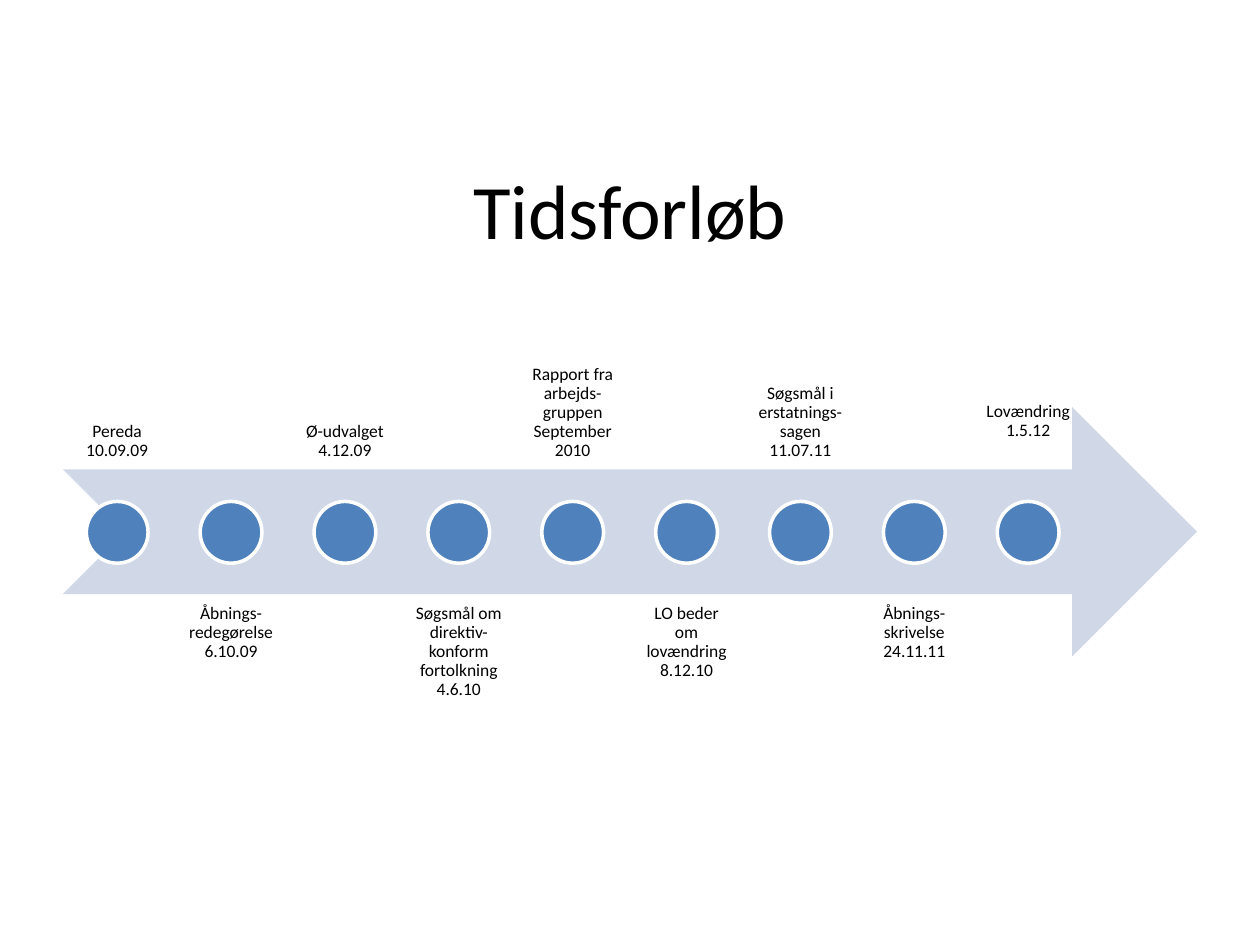
"""Build the Tidsforløb timeline slide."""
import dataclasses

import lxml.etree
import pptx
import pptx.dml.color
import pptx.enum.shapes
import pptx.enum.text
import pptx.oxml.ns
import pptx.util

Inches = pptx.util.Inches
Pt = pptx.util.Pt
Shape = pptx.enum.shapes.MSO_SHAPE
Anchor = pptx.enum.text.MSO_ANCHOR
qn = pptx.oxml.ns.qn

FONT = "Calibri"
COLORS = {"text": "000000", "band": "D0D8E8", "dot": "4F81BD", "edge": "FFFFFF"}
START, STEP = 0.5, 7.23 / 8
WIDTH, HEIGHT = 0.86, 1.98
UPPER, LOWER = 1.75, 4.72
DOT, DOT_TOP = 0.49, 3.98
PAD = 0.08


@dataclasses.dataclass
class Event:
    label: str
    lift: float = 0


EVENTS = [
    Event("Pereda\n10.09.09"),
    Event("Åbnings-redegørelse\n6.10.09"),
    Event("Ø-udvalget\n4.12.09"),
    Event("Søgsmål om direktiv-konform fortolkning\n4.6.10"),
    Event("Rapport fra arbejds-gruppen\nSeptember 2010"),
    Event("LO beder om lovændring\n8.12.10"),
    Event("Søgsmål i erstatnings-sagen\n11.07.11"),
    Event("Åbnings-skrivelse\n24.11.11"),
    Event("Lovændring\n1.5.12", lift=0.17),
]


def color(name: str) -> pptx.dml.color.RGBColor:
    return pptx.dml.color.RGBColor.from_string(COLORS[name])


def add_text(slide, text: str, box: tuple, *, size: float, anchor,
             pad: float | None = None, lift: float = 0,
             spacing: float | None = None) -> None:
    frame = slide.shapes.add_textbox(*map(Inches, box)).text_frame
    frame.word_wrap = True
    frame.vertical_anchor = anchor
    if pad is not None:
        frame.margin_left = frame.margin_right = frame.margin_top = Inches(pad)
        frame.margin_bottom = Inches(pad + lift)
    para = frame.paragraphs[0]
    para.text = text
    para.alignment = pptx.enum.text.PP_ALIGN.CENTER
    para.line_spacing = spacing
    for run in para.runs:
        run.font.name = FONT
        run.font.size = Pt(size)
        run.font.color.rgb = color("text")
    for mark in para._p.findall(qn("a:br")):
        lxml.etree.SubElement(mark, qn("a:rPr"), sz=str(size * 100))


def add_shape(slide, kind, box: tuple, fill: str, edge: str | None = None) -> None:
    shape = slide.shapes.add_shape(kind, *map(Inches, box))
    shape.shadow.inherit = False
    shape.fill.solid()
    shape.fill.fore_color.rgb = color(fill)
    if edge:
        shape.line.color.rgb = color(edge)
        shape.line.width = Pt(2)
    else:
        shape.line.fill.background()


def add_event(slide, index: int, event: Event) -> None:
    left = START + index * STEP
    above = index % 2 == 0
    add_text(slide, event.label, (left, UPPER if above else LOWER, WIDTH, HEIGHT),
             size=10, anchor=Anchor.BOTTOM if above else Anchor.TOP,
             pad=PAD, lift=event.lift, spacing=0.9)
    add_shape(slide, Shape.OVAL, (left + (WIDTH - DOT) / 2, DOT_TOP, DOT, DOT),
              "dot", "edge")


def main() -> None:
    deck = pptx.Presentation()
    deck.slide_width, deck.slide_height = Inches(10), Inches(7.5)
    slide = deck.slides.add_slide(deck.slide_layouts[6])
    add_text(slide, "Tidsforløb", (0.5, 1, 9, 1.32), size=44, anchor=Anchor.MIDDLE)
    add_shape(slide, Shape.NOTCHED_RIGHT_ARROW, (0.5, 3.23, 9, HEIGHT), "band")
    for index, event in enumerate(EVENTS):
        add_event(slide, index, event)
    deck.save("out.pptx")


if __name__ == "__main__":
    main()
